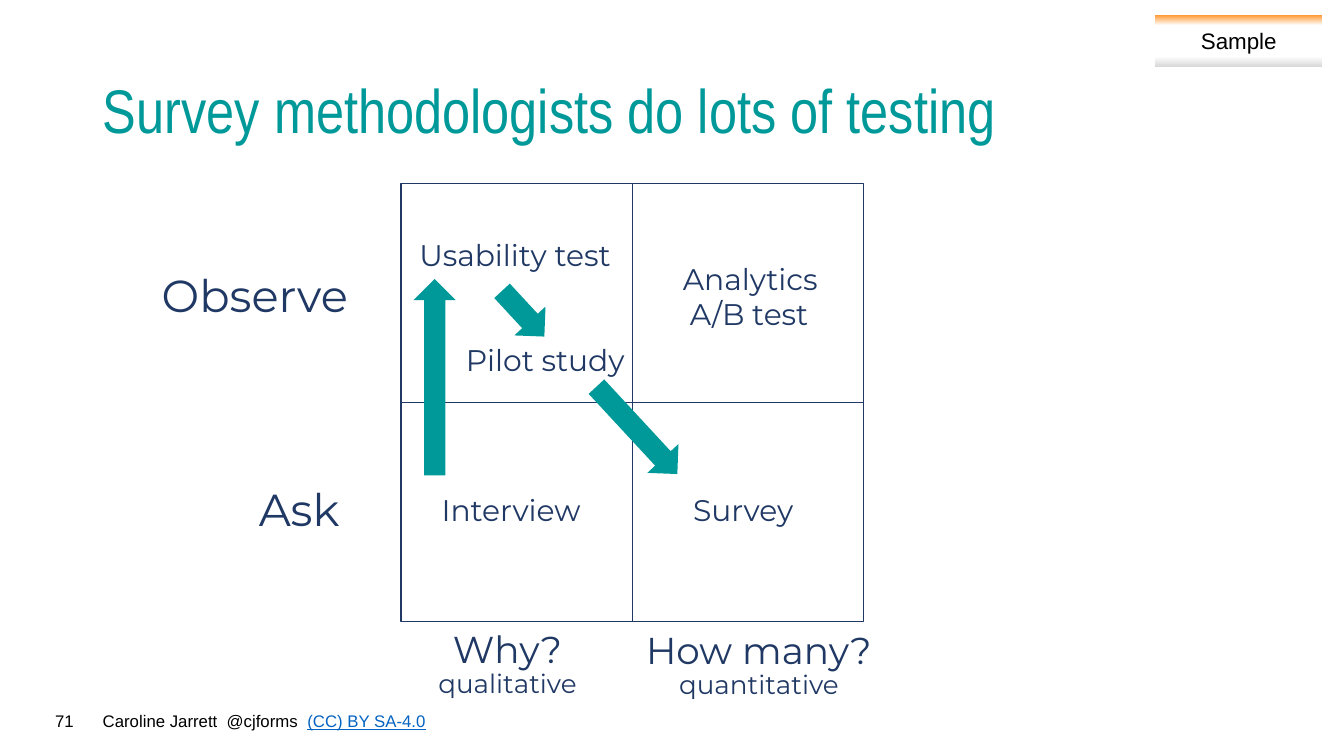
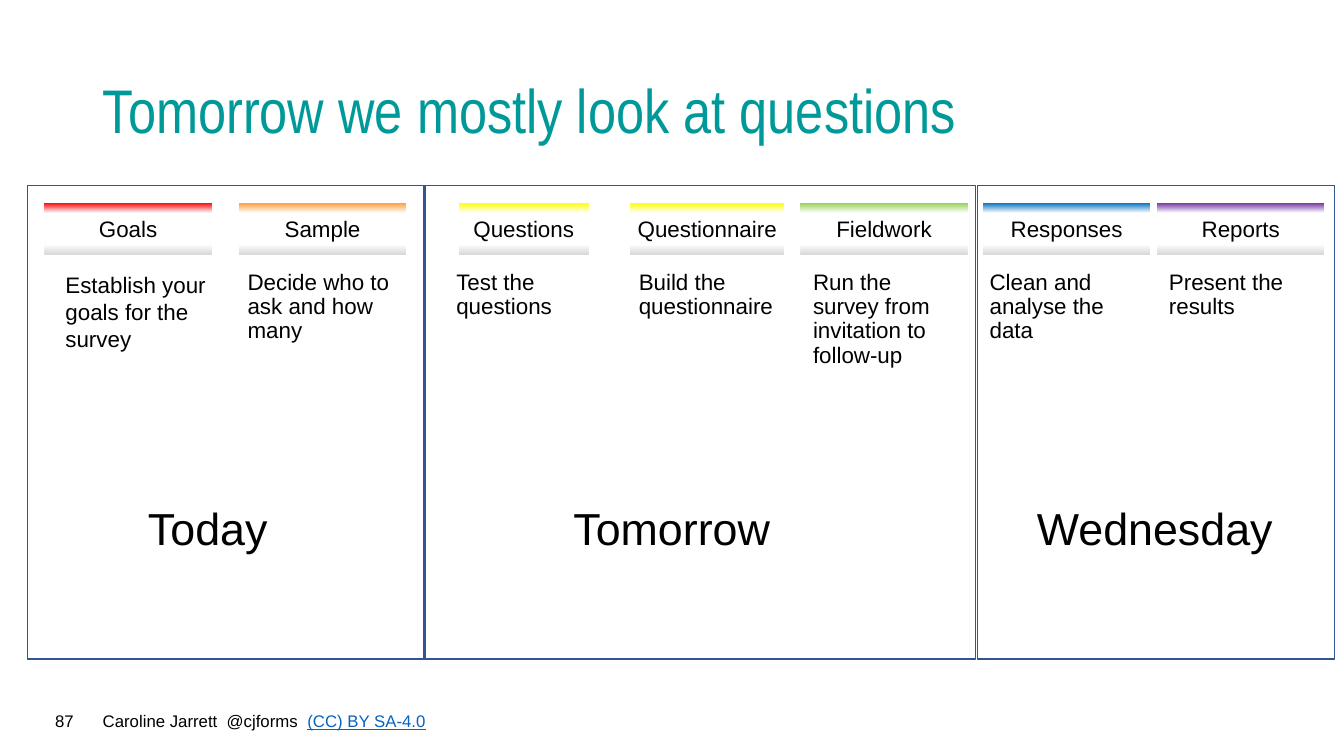
from dataclasses import dataclass

from lxml import etree
from pptx import Presentation
from pptx import util as u
from pptx.dml.color import RGBColor
from pptx.enum import shapes, text
from pptx.oxml import ns

Cm, Pt = u.Cm, u.Pt
Align, Anchor, Shape = text.PP_ALIGN, text.MSO_ANCHOR, shapes.MSO_SHAPE

# Shared colours and fonts
TEAL = RGBColor(0x00, 0x99, 0x99)
NAVY = RGBColor(0x20, 0x38, 0x64)
FRAME_BLUE = RGBColor(0x32, 0x54, 0x91)
LINK_BLUE = RGBColor(0x05, 0x63, 0xC1)
BLACK = RGBColor(0x00, 0x00, 0x00)
WHITE = RGBColor(0xFF, 0xFF, 0xFF)
GREY = RGBColor(0xD9, 0xD9, 0xD9)
RED = RGBColor(0xFF, 0x00, 0x00)
ORANGE = RGBColor(0xFF, 0x99, 0x33)
YELLOW = RGBColor(0xFF, 0xFF, 0x00)
GREEN = RGBColor(0x92, 0xD0, 0x50)
BLUE = RGBColor(0x00, 0x70, 0xC0)
PURPLE = RGBColor(0x70, 0x30, 0xA0)
BODY, HEADING, DIAGRAM = "Arial", "Arial Narrow", "Montserrat"

# Sizes in cm
BAND_W, BAND_H = 4.22, 1.3
STAGE_TOP, NOTE_TOP = 5.11, 6.71
DAY_TOP, DAY_H, DAY_LABEL_TOP = 4.67, 11.94, 12.5
GRID_LEFT, GRID_TOP, GRID_W, GRID_H = 10.11, 4.62, 11.66, 11.05
ARROW_H = 1.07


@dataclass
class Label:
    words: str
    left: float
    top: float
    width: float
    size: float = 21.3
    detail: str = ""


@dataclass
class Arrow:
    left: float
    top: float
    length: float
    rotation: float


@dataclass
class Stage:
    name: str
    color: RGBColor
    left: float
    note: str
    note_left: float
    width: float = BAND_W
    note_width: float = 4.14
    spacing: float = 0.9


@dataclass
class Day:
    name: str
    left: float
    width: float
    label_left: float


LABELS = [
    Label("Observe", 2.03, 6.78, 8.79, 32),
    Label("Ask", 5.28, 12.17, 4.52, 32),
    Label("Why?", 9.96, 15.77, 5.66, 26.7, "qualitative"),
    Label("How many?", 15.95, 15.8, 6.35, 26.7, "quantitative"),
    Label("Usability test", 10.01, 5.94, 5.94),
    Label("Pilot study", 10.97, 8.59, 5.54),
    Label("Analytics", 16.05, 6.55, 5.72),
    Label("A/B test", 16.43, 7.42, 4.9),
    Label("Interview", 10.11, 12.37, 5.54),
    Label("Survey", 16.15, 12.37, 5.16),
]
ARROWS = [
    Arrow(12.4, 7.37, 1.57, 47.2),
    Arrow(8.48, 8.97, 4.95, 270),
    Arrow(14.55, 10.31, 3, 47.2),
]
STAGES = [
    Stage("Goals", RED, 1.12, "Establish your goals for the survey", 1.4, spacing=1),
    Stage("Sample", ORANGE, 6.02, "Decide who to ask and how many", 5.99),
    Stage("Questions", YELLOW, 11.56, "Test the questions", 11.25, width=3.28),
    Stage("Questionnaire", YELLOW, 15.88, "Build the questionnaire", 15.85,
          width=3.89, note_width=4.78),
    Stage("Fieldwork", GREEN, 20.17, "Run the survey from invitation to follow-up", 20.24),
    Stage("Responses", BLUE, 24.77, "Clean and analyse the data", 24.69),
    Stage("Reports", PURPLE, 29.16, "Present the results", 29.21),
]
DAYS = [
    Day("Today", 0.69, 10.03, 3.48),
    Day("Tomorrow", 10.69, 13.89, 14.2),
    Day("Wednesday", 24.64, 8.99, 25.88),
]


def add_run(p, words: str, *, size: float = 16, font: str = BODY,
            color: RGBColor = BLACK, underline: bool = False) -> None:
    r = p.add_run()
    r.text = words
    r.font.size, r.font.name = Pt(size), font
    r.font.color.rgb = color
    if underline:
        r.font.underline = True


def add_text(s, words: str, left: float, top: float, width: float, height: float = 1, *,
             align=Align.LEFT, spacing: float = 1, wrap: bool = True, **style):
    """Add a text box and return its paragraph."""
    tf = s.shapes.add_textbox(Cm(left), Cm(top), Cm(width), Cm(height)).text_frame
    tf.word_wrap = wrap
    p = tf.paragraphs[0]
    p.alignment, p.line_spacing = align, spacing
    add_run(p, words, **style)
    return p


def add_shape(s, kind, left: float, top: float, width: float, height: float, *,
              fill: RGBColor | None = None, line: RGBColor | None = None):
    sp = s.shapes.add_shape(kind, Cm(left), Cm(top), Cm(width), Cm(height))
    sp.shadow.inherit = False
    if fill is None:
        sp.fill.background()
    else:
        sp.fill.solid()
        sp.fill.fore_color.rgb = fill
    if line is None:
        sp.line.fill.background()
    else:
        sp.line.color.rgb = line
        sp.line.width = Pt(1)
    return sp


def add_band(s, name: str, color: RGBColor, left: float, top: float,
             width: float = BAND_W) -> None:
    """Add a stage tab that fades from its colour through white to grey."""
    sp = add_shape(s, Shape.RECTANGLE, left, top, width, BAND_H)
    sp.fill.gradient()
    sp.fill.gradient_angle = 270
    stops = sp._element.spPr.find(ns.qn("a:gradFill")).find(ns.qn("a:gsLst"))
    for stop in list(stops):
        stops.remove(stop)
    for percent, shade in ((0, color), (20, WHITE), (80, WHITE), (100, GREY)):
        stop = etree.SubElement(stops, ns.qn("a:gs"), pos=str(percent * 1000))
        etree.SubElement(stop, ns.qn("a:srgbClr"), val=str(shade))
    tf = sp.text_frame
    tf.word_wrap = False
    tf.vertical_anchor = Anchor.MIDDLE
    p = tf.paragraphs[0]
    p.alignment = Align.CENTER
    add_run(p, name)


def add_divider(s, x1: float, y1: float, x2: float, y2: float) -> None:
    line = s.shapes.add_connector(shapes.MSO_CONNECTOR.STRAIGHT,
                                  Cm(x1), Cm(y1), Cm(x2), Cm(y2))
    line.line.color.rgb = NAVY
    line.line.width = Pt(0.75)
    etree.SubElement(line._element.spPr, ns.qn("a:effectLst"))


def add_slide(prs, title: str, number: int):
    """Add a slide with its title, footer and number."""
    s = prs.slides.add_slide(prs.slide_layouts[5])
    sp = s.shapes.title
    sp.left, sp.top, sp.width, sp.height = Cm(2.34), Cm(1.02), Cm(29.21), Cm(3.68)
    tf = sp.text_frame
    tf.auto_size = text.MSO_AUTO_SIZE.NONE
    tf.vertical_anchor = Anchor.MIDDLE
    p = tf.paragraphs[0]
    p.alignment, p.line_spacing = Align.LEFT, 0.9
    add_run(p, title, size=44, font=HEADING, color=TEAL)

    p = add_text(s, "Caroline Jarrett  @cjforms  ", 2.34, 17.78, 14.5, 0.76, size=12)
    add_run(p, "(CC) BY SA-4.0", size=12, color=LINK_BLUE, underline=True)
    add_text(s, str(number), 0.2, 17.78, 1.91, 0.76, align=Align.RIGHT, size=12)
    return s


def build_testing(prs) -> None:
    s = add_slide(prs, "Survey methodologists do lots of testing", 71)

    # Two-by-two grid
    add_shape(s, Shape.RECTANGLE, GRID_LEFT, GRID_TOP, GRID_W, GRID_H, line=NAVY)
    mid_x, mid_y = GRID_LEFT + GRID_W / 2, GRID_TOP + GRID_H / 2
    add_divider(s, mid_x, GRID_TOP, mid_x, GRID_TOP + GRID_H)
    add_divider(s, GRID_LEFT, mid_y, GRID_LEFT + GRID_W, mid_y)

    # Axis names and methods
    for label in LABELS:
        p = add_text(s, label.words, label.left, label.top, label.width,
                     align=Align.CENTER, spacing=0.9,
                     size=label.size, font=DIAGRAM, color=NAVY)
        if label.detail:
            p.add_line_break()
            add_run(p, label.detail, size=18.7, font=DIAGRAM, color=NAVY)

    # Route through the methods
    for arrow in ARROWS:
        sp = add_shape(s, Shape.RIGHT_ARROW, arrow.left, arrow.top,
                       arrow.length, ARROW_H, fill=TEAL)
        sp.rotation = arrow.rotation

    add_band(s, "Sample", ORANGE, 29.11, 0.38)


def build_agenda(prs) -> None:
    s = add_slide(prs, "Tomorrow we mostly look at questions", 87)

    # Stages of the survey
    for stage in STAGES:
        add_text(s, stage.note, stage.note_left, NOTE_TOP, stage.note_width, 2.1,
                 spacing=stage.spacing)
        add_band(s, stage.name, stage.color, stage.left, STAGE_TOP, stage.width)

    # Days that hold them
    for day in DAYS:
        add_shape(s, Shape.RECTANGLE, day.left, DAY_TOP, day.width, DAY_H,
                  line=FRAME_BLUE)
        add_text(s, day.name, day.label_left, DAY_LABEL_TOP, 6.65, 1.63,
                 wrap=False, size=32)


def main() -> None:
    prs = Presentation()
    prs.slide_width, prs.slide_height = Cm(33.87), Cm(19.05)
    build_testing(prs)
    build_agenda(prs)
    prs.save("out.pptx")


if __name__ == "__main__":
    main()
